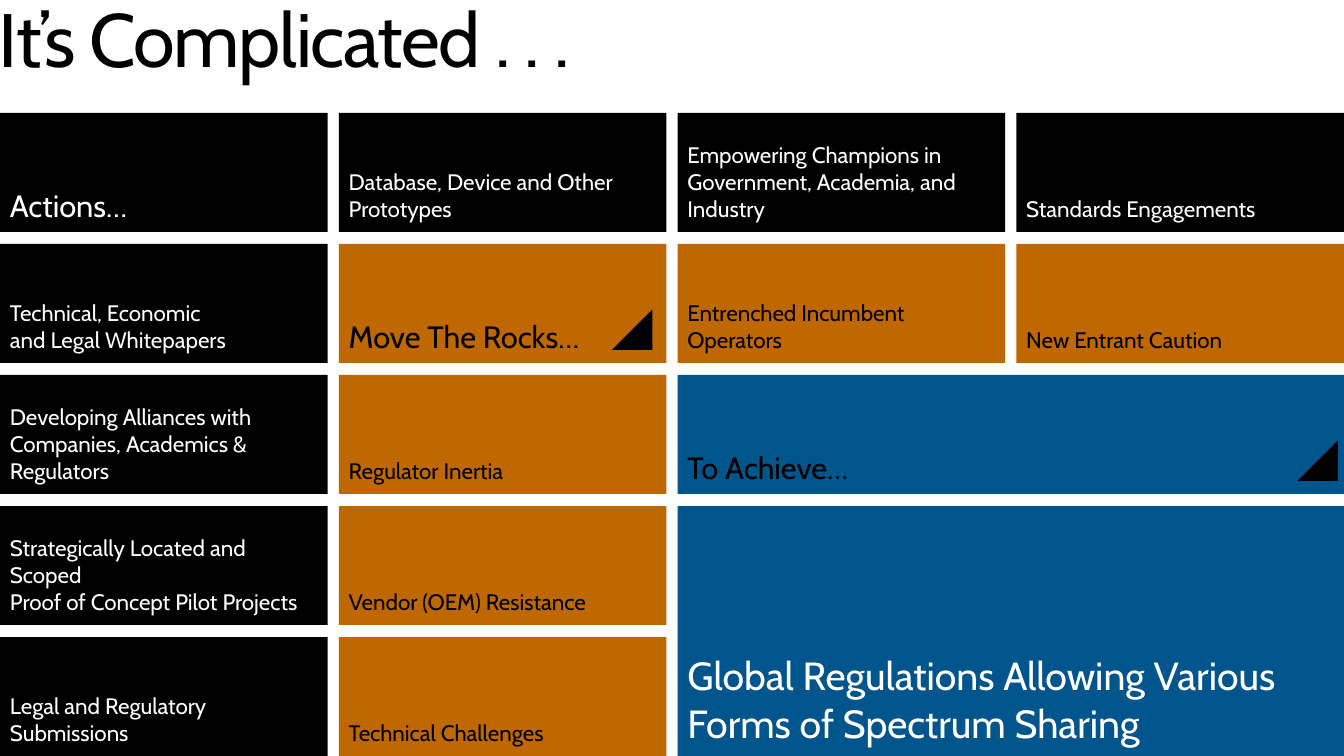
"""Build the slide that maps actions and obstacles to regulatory goals."""
from dataclasses import dataclass

from pptx import Presentation
from pptx.dml.color import RGBColor
from pptx.enum.shapes import MSO_SHAPE as Preset
from pptx.enum.text import MSO_ANCHOR as Anchor, PP_ALIGN as Align
from pptx.util import Inches, Pt

FONT = "Cabin"
BLACK, WHITE, ORANGE, BLUE = "000000", "FFFFFF", "BF6700", "00558D"
GRID_TOP = 1.12
COLUMN_WIDTH, ROW_HEIGHT = 3.25, 1.18
COLUMN_PITCH, ROW_PITCH = 3.36, 1.3
PADDING = 0.1
MARKER_SIZE = 0.4
MARKER_RISE = 0.13
HEADING, DETAIL, GOAL = 22, 16, 28


@dataclass(frozen=True)
class Tile:
    column: int
    row: int
    wording: str
    fill: str
    ink: str
    size: int = DETAIL
    columns: int = 1
    rows: int = 1
    marker_inset: float = 0

    @property
    def left(self) -> float:
        return self.column * COLUMN_PITCH

    @property
    def top(self) -> float:
        return GRID_TOP + self.row * ROW_PITCH

    @property
    def width(self) -> float:
        return COLUMN_WIDTH + (self.columns - 1) * COLUMN_PITCH

    @property
    def height(self) -> float:
        return ROW_HEIGHT + (self.rows - 1) * ROW_PITCH


TILES = [
    Tile(0, 0, "Actions…", BLACK, WHITE, HEADING),
    Tile(1, 0, "Database, Device and Other Prototypes", BLACK, WHITE),
    Tile(2, 0, "Empowering Champions in\vGovernment, Academia, and Industry", BLACK, WHITE),
    Tile(3, 0, "Standards Engagements", BLACK, WHITE),
    Tile(0, 1, "Technical, Economic\nand Legal Whitepapers", BLACK, WHITE),
    Tile(0, 2, "Developing Alliances with Companies, Academics & Regulators", BLACK, WHITE),
    Tile(0, 3, "Strategically Located and Scoped\vProof of Concept Pilot Projects", BLACK, WHITE),
    Tile(0, 4, "Legal and Regulatory Submissions", BLACK, WHITE),
    Tile(1, 1, "Move The Rocks…", ORANGE, BLACK, HEADING, marker_inset=0.14),
    Tile(2, 1, "Entrenched Incumbent Operators", ORANGE, BLACK),
    Tile(3, 1, "New Entrant Caution", ORANGE, BLACK),
    Tile(1, 2, "Regulator Inertia", ORANGE, BLACK),
    Tile(1, 3, "Vendor (OEM) Resistance", ORANGE, BLACK),
    Tile(1, 4, "Technical Challenges", ORANGE, BLACK),
    Tile(2, 2, "To Achieve…", BLUE, BLACK, HEADING, columns=2, marker_inset=0.06),
    Tile(2, 3, "Global Regulations Allowing Various Forms of Spectrum Sharing",
         BLUE, WHITE, GOAL, columns=2, rows=2),
]


def colour(value: str) -> RGBColor:
    return RGBColor.from_string(value)


def write(frame, wording: str, size: int, ink: str, padding: float, bottom: float) -> None:
    frame.word_wrap = True
    frame.margin_left = frame.margin_right = frame.margin_top = Inches(padding)
    frame.margin_bottom = Inches(bottom)
    frame.text = wording
    for paragraph in frame.paragraphs:
        paragraph.alignment = Align.LEFT
        paragraph.font.name = FONT
        paragraph.font.size = Pt(size)
        paragraph.font.color.rgb = colour(ink)


def add_filled(slide, preset: Preset, left: float, top: float,
               width: float, height: float, fill: str):
    shape = slide.shapes.add_shape(
        preset, Inches(left), Inches(top), Inches(width), Inches(height))
    shape.shadow.inherit = False
    shape.fill.solid()
    shape.fill.fore_color.rgb = colour(fill)
    shape.line.fill.background()
    return shape


def add_tile(slide, tile: Tile) -> None:
    panel = add_filled(slide, Preset.RECTANGLE, tile.left, tile.top,
                       tile.width, tile.height, tile.fill)
    panel.text_frame.vertical_anchor = Anchor.BOTTOM
    bottom = 0.08 if tile.size == HEADING else PADDING
    write(panel.text_frame, tile.wording, tile.size, tile.ink, PADDING, bottom)
    if tile.marker_inset:
        marker = add_filled(
            slide, Preset.RIGHT_TRIANGLE,
            tile.left + tile.width - tile.marker_inset - MARKER_SIZE,
            tile.top + tile.height - MARKER_RISE - MARKER_SIZE,
            MARKER_SIZE, MARKER_SIZE, BLACK)
        marker.rotation = 270


def add_title(slide, wording: str) -> None:
    title = slide.shapes.add_textbox(
        Inches(-0.01), Inches(0.02), Inches(13.96), Inches(0.82))
    write(title.text_frame, wording, 54, BLACK, 0, 0)
    paragraph = title.text_frame.paragraphs[0]
    paragraph.line_spacing = 0.9
    paragraph.runs[0]._r.get_or_add_rPr().set("spc", "-100")


def main() -> None:
    deck = Presentation()
    deck.slide_width, deck.slide_height = Inches(13.33), Inches(7.5)
    slide = deck.slides.add_slide(deck.slide_layouts[6])
    add_title(slide, "It’s Complicated . . .")
    for tile in TILES:
        add_tile(slide, tile)
    deck.save("out.pptx")


if __name__ == "__main__":
    main()
